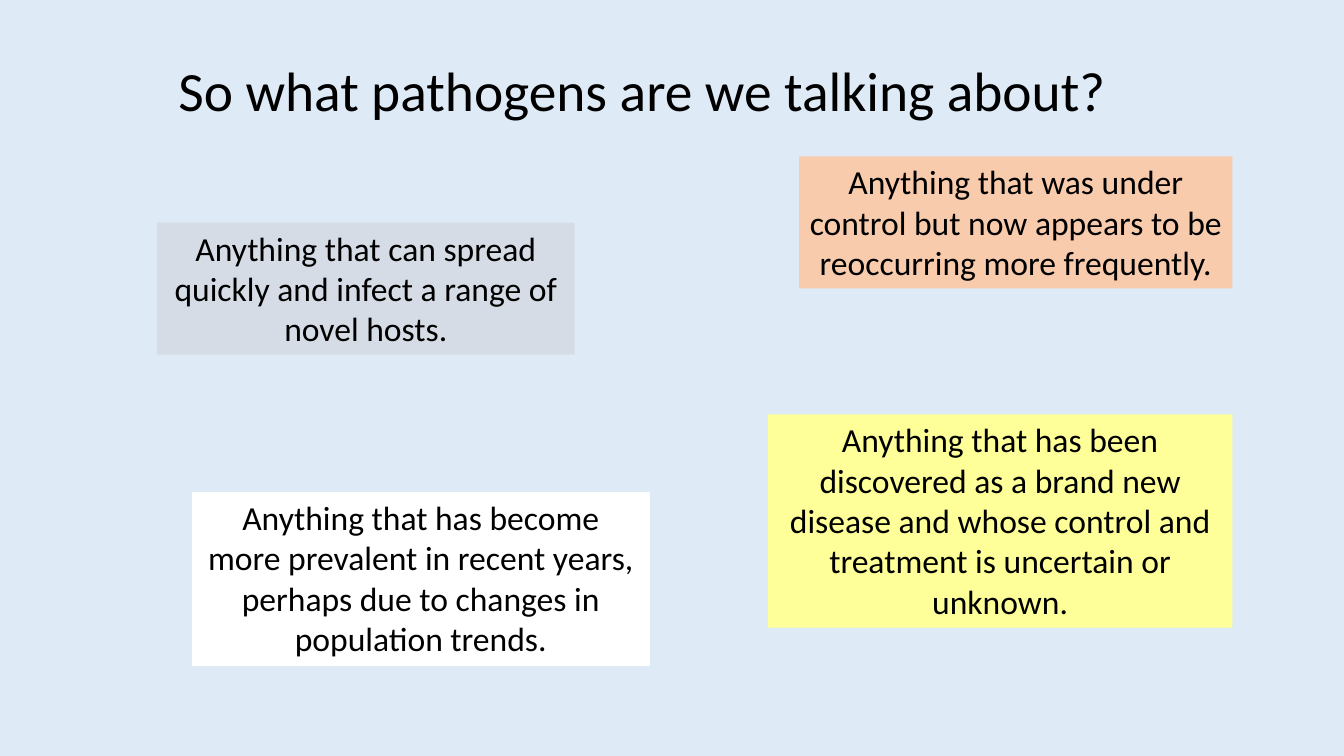
from pptx import Presentation
from pptx.dml.color import RGBColor
from pptx.enum.text import MSO_ANCHOR, PP_ALIGN
from pptx.util import Cm, Pt

FONT = "Calibri"
BACKGROUND = "DEEBF7"
TITLE = "So what pathogens are we talking about?"
TITLE_BOX = (4.24, 0.76, 25.4, 3.18)

# text, (left, top, width, height) in cm, fill, line
STATEMENTS = [
    ("Anything that can spread quickly and infect a range of novel hosts.",
     (3.96, 5.61, 10.52, 3.33), "D6DCE5", None),
    ("Anything that has become more prevalent in recent years, perhaps due to "
     "changes in population trends.",
     (4.85, 12.4, 11.51, 4.37), "FFFFFF", "FFFFFF"),
    ("Anything that was under control but now appears to be reoccurring more "
     "frequently.",
     (20.14, 3.94, 10.92, 3.33), "F8CBAD", None),
    ("Anything that has been discovered as a brand new disease and whose "
     "control and treatment is uncertain or unknown.",
     (19.35, 10.44, 11.71, 5.38), "FFFF99", None),
]


def paint(fill, color):
    fill.solid()
    fill.fore_color.rgb = RGBColor.from_string(color)


def write(shape, text, size, align, anchor, line_spacing=1.0):
    frame = shape.text_frame
    frame.word_wrap = True
    frame.vertical_anchor = anchor
    paragraph = frame.paragraphs[0]
    paragraph.alignment = align
    paragraph.line_spacing = line_spacing
    run = paragraph.add_run()
    run.text = text
    run.font.name = FONT
    run.font.size = Pt(size)
    paint(run.font.fill, "000000")


def add_statement(slide, text, box, fill, line):
    shape = slide.shapes.add_textbox(*map(Cm, box))
    paint(shape.fill, fill)
    if line:
        paint(shape.line.fill, line)
        shape.line.width = Pt(0.75)
    write(shape, text, size=24, align=PP_ALIGN.CENTER, anchor=MSO_ANCHOR.TOP)


def main():
    presentation = Presentation()
    presentation.slide_width = Cm(33.87)
    presentation.slide_height = Cm(19.05)
    slide = presentation.slides.add_slide(presentation.slide_layouts[5])
    paint(slide.background.fill, BACKGROUND)

    title = slide.shapes.title
    title.left, title.top, title.width, title.height = map(Cm, TITLE_BOX)
    write(title, TITLE, size=39.6, align=PP_ALIGN.LEFT,
          anchor=MSO_ANCHOR.MIDDLE, line_spacing=0.9)

    for statement in STATEMENTS:
        add_statement(slide, *statement)

    presentation.save("out.pptx")


if __name__ == "__main__":
    main()
